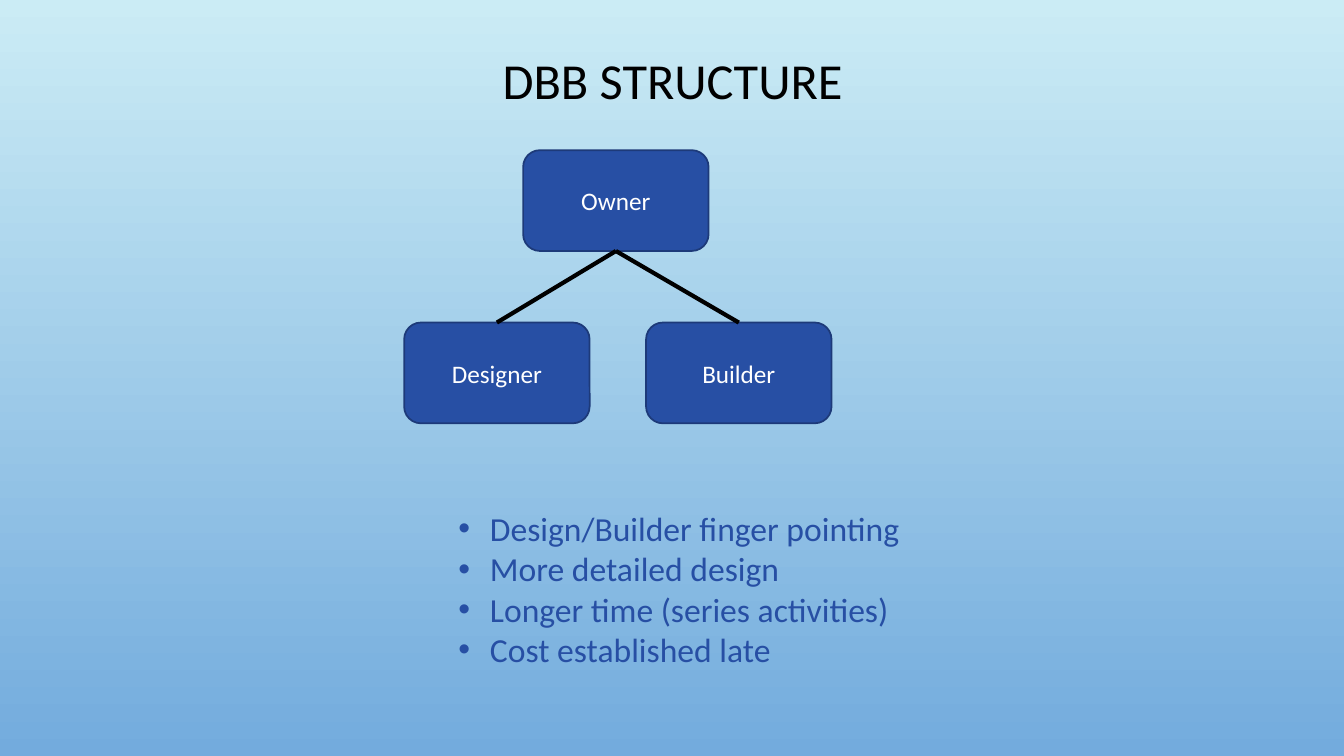
"""Build the DBB structure slide: an owner over designer and builder, with remarks."""
import dataclasses

import lxml.etree
import pptx
import pptx.dml.color
import pptx.enum.shapes
import pptx.enum.text
import pptx.oxml.ns
import pptx.presentation
import pptx.shapes.autoshape
import pptx.slide
import pptx.text.text
import pptx.util

Pt = pptx.util.Pt
qn = pptx.oxml.ns.qn
FONT = "Calibri"
COLORS = {
    "sky": "CBECF5",
    "horizon": "73ABDD",
    "blue": "274FA4",
    "edge": "1D3A79",
    "black": "000000",
    "white": "FFFFFF",
}
BOX_WIDTH, BOX_HEIGHT = 132.5, 72
BULLET_INDENT = 22.5
REMARKS = [
    "Design/Builder finger pointing",
    "More detailed design",
    "Longer time (series activities)",
    "Cost established late",
]


@dataclasses.dataclass(frozen=True)
class Party:
    name: str
    left: float
    top: float


OWNER = Party("Owner", 373.7, 107.3)
REPORTS = [Party("Designer", 288.7, 230.4), Party("Builder", 461.5, 230.4)]


def color(name: str) -> pptx.dml.color.RGBColor:
    return pptx.dml.color.RGBColor.from_string(COLORS[name])


def style(para: pptx.text.text._Paragraph, size: float, ink: str) -> None:
    para.font.name = FONT
    para.font.size = Pt(size)
    para.font.color.rgb = color(ink)


def paint_background(page: pptx.slide.Slide) -> None:
    fill = page.background.fill
    fill.gradient()
    fill.gradient_angle = 270
    for stop, position, name in zip(fill.gradient_stops, (0, 1), ("sky", "horizon")):
        stop.position = position
        stop.color.rgb = color(name)


def add_title(page: pptx.slide.Slide, text: str) -> None:
    title = page.shapes.title
    title.left, title.top, title.width, title.height = Pt(73.4), Pt(-2.9), Pt(814.3), Pt(125.3)
    frame = title.text_frame
    frame.text = text
    frame.vertical_anchor = pptx.enum.text.MSO_ANCHOR.MIDDLE
    para = frame.paragraphs[0]
    para.alignment = pptx.enum.text.PP_ALIGN.CENTER
    para.line_spacing = 0.9
    style(para, 36, "black")


def add_party(page: pptx.slide.Slide, party: Party) -> pptx.shapes.autoshape.Shape:
    box = page.shapes.add_shape(
        pptx.enum.shapes.MSO_SHAPE.ROUNDED_RECTANGLE,
        Pt(party.left), Pt(party.top), Pt(BOX_WIDTH), Pt(BOX_HEIGHT),
    )
    box.shadow.inherit = False
    box.fill.solid()
    box.fill.fore_color.rgb = color("blue")
    box.line.color.rgb = color("edge")
    box.line.width = Pt(1.25)
    box.text_frame.text = party.name
    box.text_frame.vertical_anchor = pptx.enum.text.MSO_ANCHOR.MIDDLE
    para = box.text_frame.paragraphs[0]
    para.alignment = pptx.enum.text.PP_ALIGN.CENTER
    style(para, 18, "white")
    return box


def join(
    page: pptx.slide.Slide,
    upper: pptx.shapes.autoshape.Shape,
    lower: pptx.shapes.autoshape.Shape,
) -> None:
    link = page.shapes.add_connector(pptx.enum.shapes.MSO_CONNECTOR.STRAIGHT, 0, 0, 0, 0)
    link.begin_connect(upper, 2)
    link.end_connect(lower, 0)
    link.line.color.rgb = color("black")
    link.line.width = Pt(3)
    lxml.etree.SubElement(link._element.spPr, qn("a:effectLst"))


def add_remarks(page: pptx.slide.Slide, remarks: list[str]) -> None:
    box = page.shapes.add_textbox(Pt(320.4), Pt(359.3), Pt(332.6), Pt(123.8))
    frame = box.text_frame
    frame.word_wrap = False
    frame.auto_size = pptx.enum.text.MSO_AUTO_SIZE.SHAPE_TO_FIT_TEXT
    frame.text = "\n".join(remarks)
    for para in frame.paragraphs:
        properties = para._p.get_or_add_pPr()
        properties.set("marL", str(Pt(BULLET_INDENT)))
        properties.set("indent", str(-Pt(BULLET_INDENT)))
        lxml.etree.SubElement(properties, qn("a:buFont"), typeface="Arial")
        lxml.etree.SubElement(properties, qn("a:buChar"), char="•")
        style(para, 24, "blue")


def main() -> None:
    deck = pptx.Presentation()
    deck.slide_width, deck.slide_height = Pt(960), Pt(540)
    page = deck.slides.add_slide(deck.slide_layouts.get_by_name("Title Only"))
    paint_background(page)
    add_title(page, "DBB STRUCTURE")
    owner = add_party(page, OWNER)
    for report in [add_party(page, party) for party in REPORTS]:
        join(page, owner, report)
    add_remarks(page, REMARKS)
    deck.save("out.pptx")


if __name__ == "__main__":
    main()
